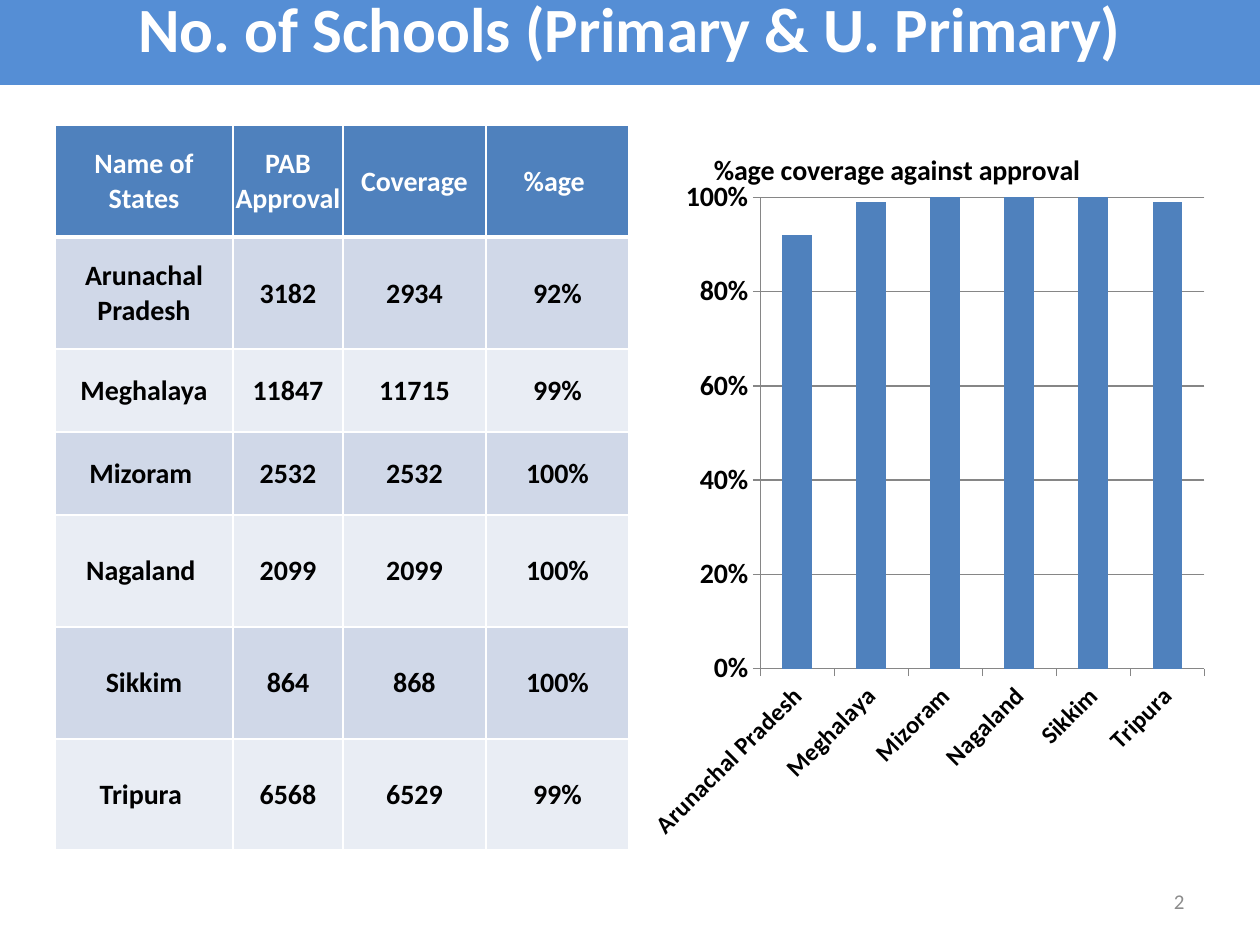
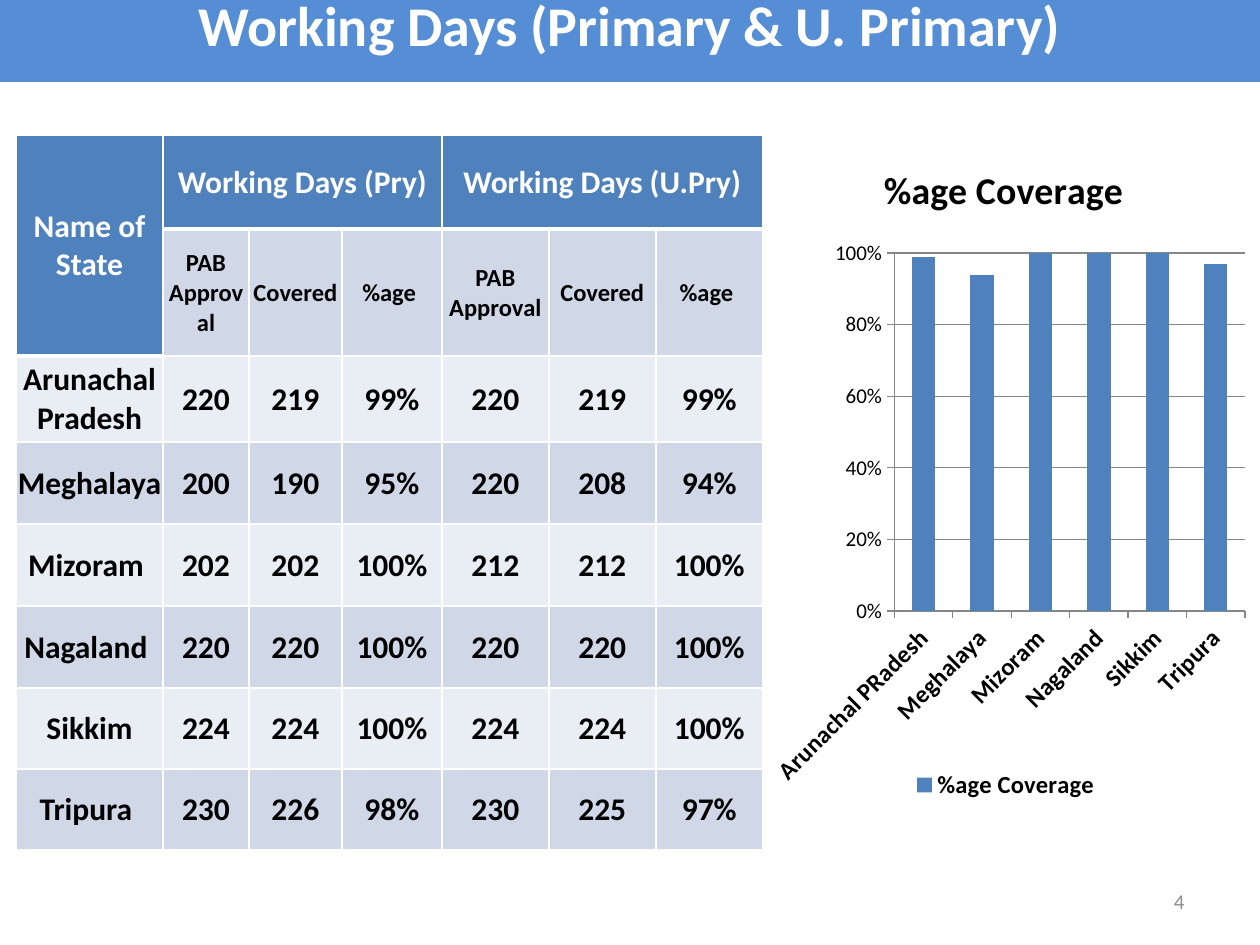
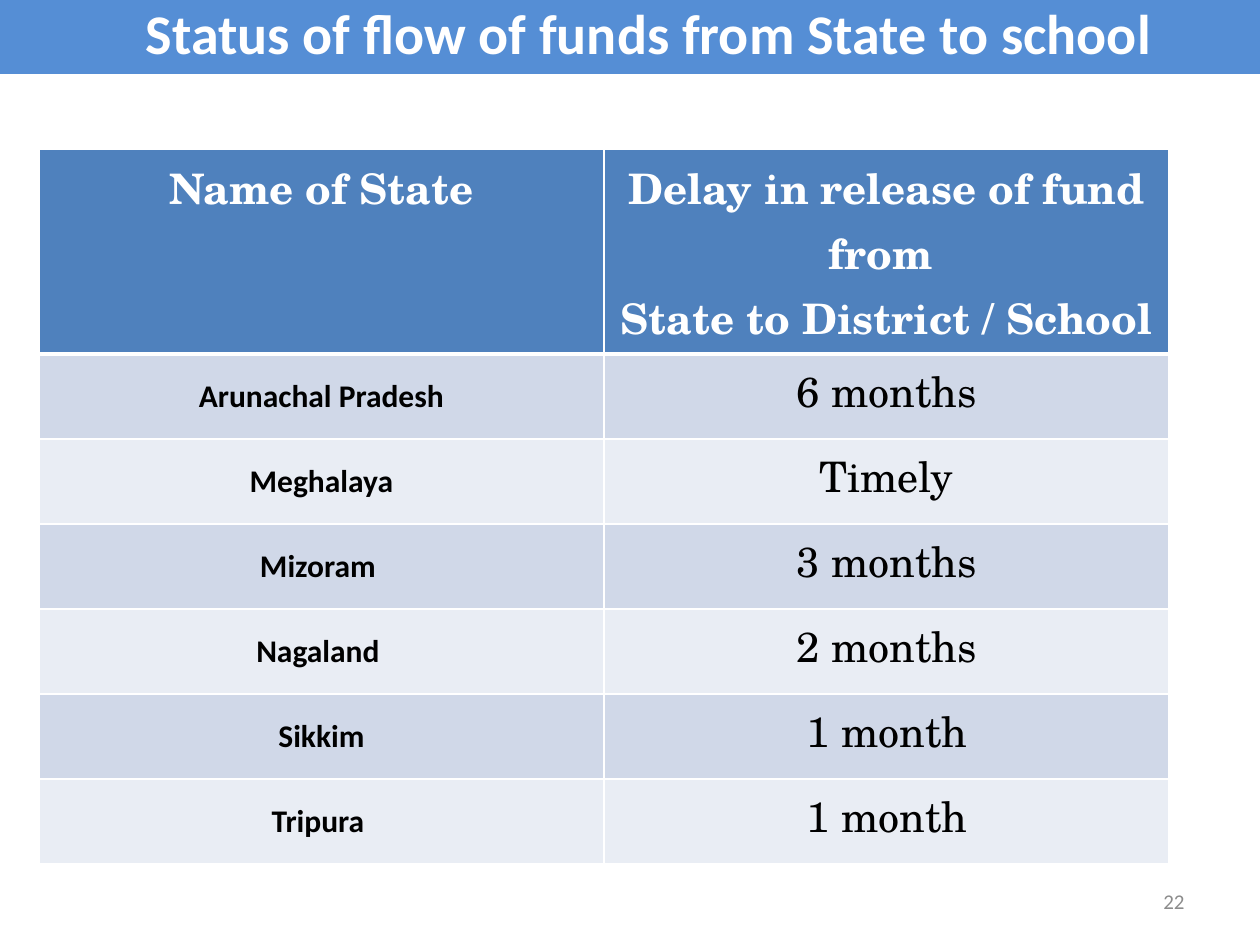
from dataclasses import dataclass

from lxml.etree import SubElement
from pptx import Presentation
from pptx.chart.data import CategoryChartData
from pptx.dml.color import RGBColor as RGB
from pptx.enum.chart import XL_CHART_TYPE as CHART, XL_LEGEND_POSITION as LEGEND
from pptx.enum.chart import XL_TICK_MARK as TICK
from pptx.enum.text import MSO_ANCHOR as ANCHOR, MSO_AUTO_SIZE as AUTOSIZE, PP_ALIGN as ALIGN
from pptx.oxml.ns import qn
from pptx.util import Emu, Pt


# Shared look
@dataclass(frozen=True)
class Theme:
    band: str = "558ED5"
    accent: str = "4F81BD"
    stripes: tuple = ("E9EDF4", "D0D8E8")
    white: str = "FFFFFF"
    black: str = "000000"
    number: str = "8C8C8C"
    axis: str = "868686"
    sans: str = "Calibri"
    serif: str = "TeX Gyre Schola"
    title_big: int = 36
    title: int = 32
    chart_title: float = 21.6
    large: int = 24
    medium: int = 18
    body: int = 16
    small: int = 14
    tiny: int = 12


T = Theme()
STATES = ["Arunachal Pradesh", "Meghalaya", "Mizoram ", "Nagaland ", "Sikkim", "Tripura "]
TIGHT = dict(margin_left=1, margin_top=1, margin_right=1, margin_bottom=0)
ROOMY = dict(margin_left=9, margin_top=6, margin_right=9, margin_bottom=6)


def px(n):
    return Emu(round(n * 914400 / 126))


def assign(obj, values):
    for name, value in values.items():
        setattr(obj, name, value)


def set_font(font, size, color=T.black, bold=True, name=T.sans):
    assign(font, dict(size=Pt(size), bold=bold, name=name))
    font.color.rgb = RGB.from_string(color)


def fill(obj, color):
    obj.fill.solid()
    obj.fill.fore_color.rgb = RGB.from_string(color)


def set_margins(obj, margins):
    assign(obj, {name: px(n) for name, n in margins.items()})


# Title band and page number
def add_slide(prs, title, number, top, height, size=T.title, indent=0):
    s = prs.slides.add_slide(prs.slide_layouts[5])
    sp = s.shapes.title
    assign(sp, dict(left=0, top=px(top), width=prs.slide_width, height=px(height)))
    fill(sp, T.band)
    tf = sp.text_frame
    tf.text = title
    assign(tf, dict(word_wrap=True, auto_size=AUTOSIZE.NONE, vertical_anchor=ANCHOR.TOP))
    set_margins(tf, dict(margin_left=12 + indent, margin_top=6, margin_right=12, margin_bottom=6))
    p = tf.paragraphs[0]
    assign(p, dict(alignment=ALIGN.CENTER, line_spacing=0.9))
    set_font(p.runs[0].font, size, T.white)

    tf = s.shapes.add_textbox(px(903), px(876), px(294), px(50)).text_frame
    tf.text = str(number)
    assign(tf, dict(word_wrap=True, vertical_anchor=ANCHOR.MIDDLE))
    p = tf.paragraphs[0]
    p.alignment = ALIGN.RIGHT
    set_font(p.runs[0].font, T.tiny, T.number, False)
    return s


# Tables
def add_borders(cell, bottom):
    tc_pr = cell._tc.get_or_add_tcPr()
    for side, width in dict(lnL=1, lnR=1, lnB=bottom).items():
        ln = SubElement(tc_pr, qn(f"a:{side}"), w=str(Pt(width)))
        SubElement(SubElement(ln, qn("a:solidFill")), qn("a:srgbClr"), val=T.white)


def style_cell(cell, text, header, stripe, size, serif, bold):
    add_borders(cell, 3 if header else 1)
    fill(cell, T.accent if header else stripe)
    set_margins(cell, ROOMY if serif else TIGHT)
    cell.vertical_anchor = ANCHOR.TOP if serif else ANCHOR.MIDDLE
    cell.text = text
    for p in cell.text_frame.paragraphs:
        p.alignment = ALIGN.CENTER
        for r in p.runs:
            set_font(r.font, size, T.white if header else T.black, bold,
                     T.serif if serif else T.sans)


def add_table(s, left, top, cols, rows, data, size, merges=(), sub_size=None, serif=False):
    table = s.shapes.add_table(len(rows), len(cols), px(left), px(top),
                               px(sum(cols)), px(sum(rows))).table
    for column, width in zip(table.columns, cols):
        column.width = px(width)
    for row, height in zip(table.rows, rows):
        row.height = px(height)
    for r, values in enumerate(data):
        for c, text in enumerate(values):
            header = r == 0 or text is None
            is_serif = serif and (r == 0 or c > 0)
            cell_size = sub_size if sub_size and r == 1 else T.large if is_serif else size
            style_cell(table.cell(r, c), text or "", header, T.stripes[r % 2],
                       cell_size, is_serif, r == 0 or not is_serif)
    for first, last in merges:
        table.cell(*first).merge(table.cell(*last))


# Charts
def set_layout(parent, index, **place):
    layout = parent.find(qn("c:layout"))
    if layout is None:
        layout = parent.makeelement(qn("c:layout"))
        parent.insert(index, layout)
    manual = SubElement(layout, qn("c:manualLayout"))
    if "w" in place:
        SubElement(manual, qn("c:layoutTarget"), val="inner")
    for axis in "xy":
        SubElement(manual, qn(f"c:{axis}Mode"), val="edge")
    for name, value in place.items():
        SubElement(manual, qn(f"c:{name}"), val=str(value))


def add_chart(s, box, title, title_size, cats, name, values, plot, value_font):
    data = CategoryChartData(number_format="0%")
    data.categories = cats
    data.add_series(name, values)
    chart = s.shapes.add_chart(CHART.COLUMN_CLUSTERED, *map(px, box), data).chart
    set_font(chart.font, T.medium, bold=False)
    assign(chart, dict(has_title=True, has_legend=False))
    chart.chart_title.text_frame.text = title
    set_font(chart.chart_title.text_frame.paragraphs[0].runs[0].font, title_size)
    assign(chart.plots[0], dict(gap_width=150, vary_by_categories=False))
    fill(chart.plots[0].series[0].format, T.accent)

    value, category = chart.value_axis, chart.category_axis
    assign(value, dict(minimum_scale=0, maximum_scale=1, major_unit=0.2,
                       has_major_gridlines=True))
    assign(value.tick_labels, dict(number_format="0%", number_format_is_linked=False))
    set_font(value.tick_labels.font, **value_font)
    set_font(category.tick_labels.font, T.small)
    category._element.txPr.find(qn("a:bodyPr")).set("rot", "-2700000")
    for axis in (value, category):
        axis.major_tick_mark = TICK.OUTSIDE
    for line in (value.format.line, category.format.line, value.major_gridlines.format.line):
        line.color.rgb = RGB.from_string(T.axis)
        line.width = Pt(0.75)
    set_layout(chart._chartSpace.chart.plotArea, 0, **plot)
    return chart


def add_legend(chart, **place):
    chart.has_legend = True
    assign(chart.legend, dict(position=LEGEND.BOTTOM, include_in_layout=False))
    set_font(chart.legend.font, T.small)
    set_layout(chart.legend._element, 1, **place)


# Slides
def schools(prs):
    s = add_slide(prs, "No. of Schools (Primary & U. Primary)", 2, -8, 93, T.title_big)
    add_chart(s, (596, 125, 609, 725), "%age coverage against approval ", T.body,
              [state.strip() for state in STATES], "Series 1", [0.92, 0.99, 1, 1, 1, 0.99],
              dict(x=0.27, y=0.1, w=0.73, h=0.65), dict(size=T.body))
    figures = [("3182", "2934", "92%"), ("11847", "11715", "99%"), ("2532", "2532", "100%"),
               ("2099", "2099", "100%"), ("864", "868", "100%"), ("6568", "6529", "99%")]
    data = [("Name of States", "PAB Approval", "Coverage", "%age ")]
    data += [(state, *row) for state, row in zip(STATES, figures)]
    add_table(s, 55, 125, [178, 110, 143, 143], [112, 112, 83, 83, 112, 112, 111], data, T.body)


def working_days(prs):
    s = add_slide(prs, "Working Days (Primary & U. Primary)", 4, -8, 90)
    name = "%age Coverage "
    cats = ["Arunachal PRadesh"] + [state.strip() for state in STATES[1:]]
    chart = add_chart(s, (761, 135, 494, 716), name, T.chart_title, cats, name,
                      [0.99, 0.94, 1, 1, 1, 0.97], dict(x=0.27, y=0.165, w=0.71, h=0.5),
                      dict(size=T.tiny, bold=False))
    add_legend(chart, x=0.3, y=0.88)
    figures = [("220", "219", "99%", "220", "219", "99%"),
               ("200", "190", "95%", "220", "208", "94%"),
               ("202", "202", "100%", "212", "212", "100%"),
               ("220", "220", "100%") * 2,
               ("224", "224", "100%") * 2,
               ("230", "226", "98%", "230", "225", "97%")]
    data = [("Name of State", "Working Days (Pry)", None, None, "Working Days (U.Pry)", None, None),
            (None, *("PAB Approval", "Covered", "%age ") * 2)]
    data += [(state, *row) for state, row in zip(STATES, figures)]
    add_table(s, 16, 135, [147, 86, 93, 100, 107, 107, 107],
              [94, 127, 86] + [82] * 3 + [81] * 2, data, T.medium,
              merges=[((0, 0), (1, 0)), ((0, 1), (0, 3)), ((0, 4), (0, 6))], sub_size=T.small)


def fund_flow(prs):
    s = add_slide(prs, "Status of flow of funds from State to school", 22, 0, 74, indent=38)
    delays = ["6 months", "Timely", "3 months", "2 months", "1 month", "1 month"]
    data = [("Name of State", "Delay in release of fund from \nState to District / School")]
    data += zip(STATES, delays)
    add_table(s, 39, 149, [565, 565], [205] + [85] * 6, data, T.medium, serif=True)


def main():
    prs = Presentation()
    assign(prs, dict(slide_width=px(1260), slide_height=px(945)))
    for build in (schools, working_days, fund_flow):
        build(prs)
    prs.save("out.pptx")


if __name__ == "__main__":
    main()
